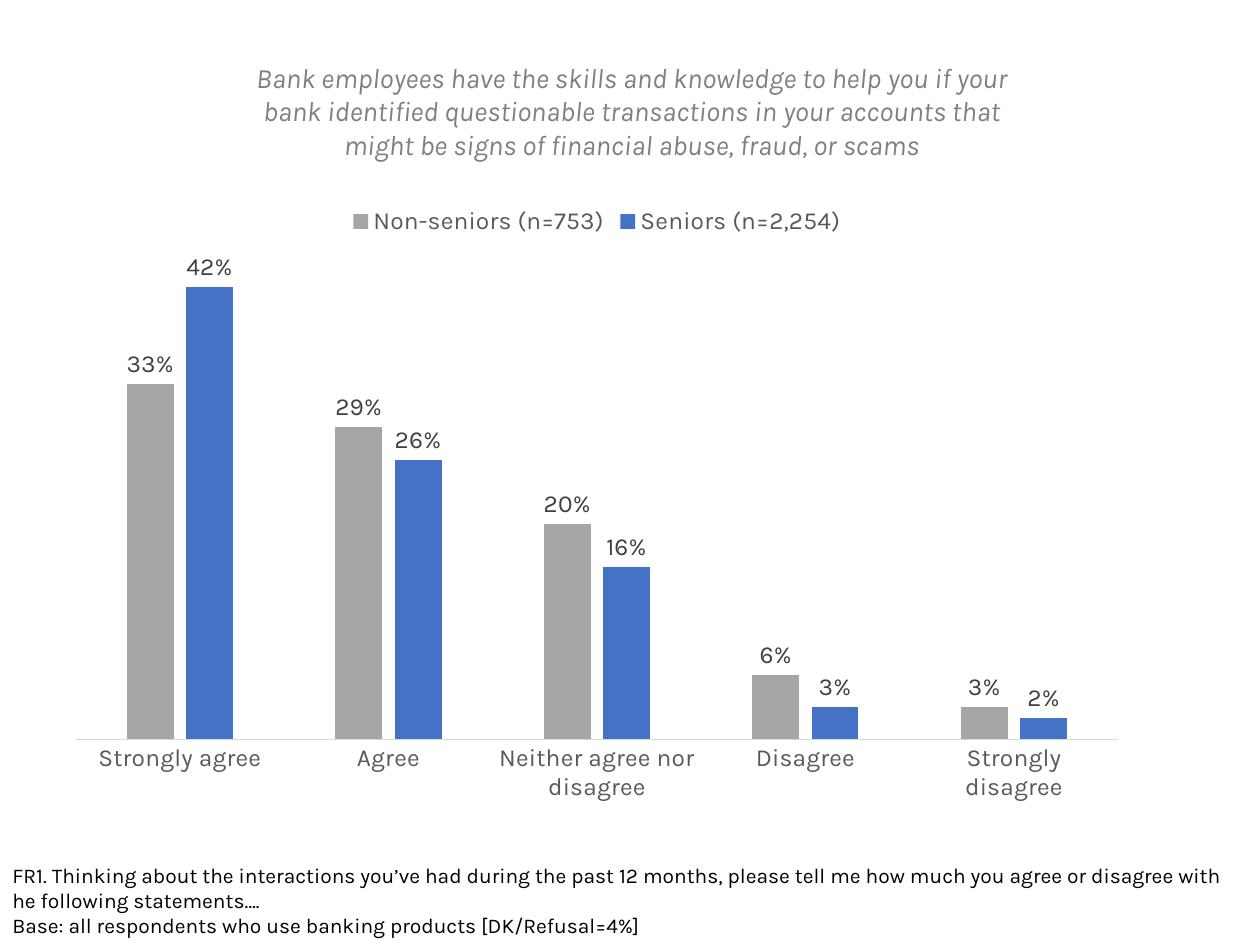
from dataclasses import dataclass

from lxml import etree
from pptx import Presentation
from pptx.chart.data import CategoryChartData
from pptx.dml.color import RGBColor
from pptx.enum.chart import (XL_CHART_TYPE, XL_LABEL_POSITION,
                             XL_LEGEND_POSITION, XL_TICK_MARK)
from pptx.enum.text import MSO_AUTO_SIZE, PP_ALIGN
from pptx.util import Pt

COLUMNS = XL_CHART_TYPE.COLUMN_CLUSTERED
LABEL_ABOVE = XL_LABEL_POSITION.OUTSIDE_END
LEGEND_TOP = XL_LEGEND_POSITION.TOP
NO_TICK = XL_TICK_MARK.NONE
LEFT, CENTER = PP_ALIGN.LEFT, PP_ALIGN.CENTER
GROW = MSO_AUTO_SIZE.SHAPE_TO_FIT_TEXT

EMU_PER_PX = 914400 / 126
PERCENT = "0%"
CHART_NS = "http://schemas.openxmlformats.org/drawingml/2006/chart"


@dataclass(frozen=True)
class Theme:
    font: str = "Karla"
    chart_font: str = "Calibri"
    question_size: int = 16
    chart_size: int = 14
    base_size: int = 12
    default_size: int = 10
    black: str = "000000"
    question: str = "808080"
    axis_text: str = "595959"
    axis_line: str = "D9D9D9"
    value_text: str = "404040"
    non_seniors: str = "A6A6A6"
    seniors: str = "4472C4"


THEME = Theme()

QUESTION = ("Bank employees have the skills and knowledge to help you if your "
            "bank identified questionable transactions in your accounts that "
            "might be signs of financial abuse, fraud, or scams")
FOOTNOTE = ("FR1. Thinking about the interactions you’ve had during the past "
            "12 months, please tell me how much you agree or disagree with "
            "he following statements….\n"
            "Base: all respondents who use banking products [DK/Refusal=4%]")

ANSWERS = ["Strongly agree", "Agree", "Neither agree nor disagree",
           "Disagree", "Strongly disagree"]
GROUPS = [
    ("Non-seniors (n=753)", [0.33, 0.29, 0.20, 0.06, 0.03], THEME.non_seniors),
    ("Seniors (n=2,254)", [0.42, 0.26, 0.16, 0.03, 0.02], THEME.seniors),
]


def px(length):
    return round(length * EMU_PER_PX)


def style_font(font, size, color, name=THEME.font, italic=None):
    font.name = name
    font.size = Pt(size)
    font.color.rgb = RGBColor.from_string(color)
    font.italic = italic


def add_text(slide, text, box, size, color, align=LEFT, italic=None):
    frame = slide.shapes.add_textbox(*map(px, box)).text_frame
    frame.word_wrap = True
    frame.auto_size = GROW
    frame.text = text
    for paragraph in frame.paragraphs:
        paragraph.alignment = align
        for run in paragraph.runs:
            style_font(run.font, size, color, italic=italic)


def place_plot(chart, **fractions):
    """Fix the inner plot area, as fractions of the chart frame."""
    plot_area = chart.plots[0]._element.getparent()
    for old in plot_area.findall(f"{{{CHART_NS}}}layout"):
        plot_area.remove(old)
    layout = etree.Element(f"{{{CHART_NS}}}layout")
    manual = etree.SubElement(layout, f"{{{CHART_NS}}}manualLayout")
    settings = {"layoutTarget": "inner", "xMode": "edge", "yMode": "edge",
                **fractions}
    for tag, value in settings.items():
        etree.SubElement(manual, f"{{{CHART_NS}}}{tag}", val=str(value))
    plot_area.insert(0, layout)


def style_axes(chart):
    answers = chart.category_axis
    answers.major_tick_mark = answers.minor_tick_mark = NO_TICK
    answers.has_major_gridlines = False
    answers.format.line.color.rgb = RGBColor.from_string(THEME.axis_line)
    answers.format.line.width = Pt(0.75)
    style_font(answers.tick_labels.font, THEME.chart_size, THEME.axis_text)

    shares = chart.value_axis
    shares.minimum_scale, shares.maximum_scale = 0, 0.45
    shares.has_major_gridlines = False
    shares.tick_labels.number_format = PERCENT
    shares.tick_labels.number_format_is_linked = False
    shares.visible = False


def style_group(series, color):
    series.format.fill.solid()
    series.format.fill.fore_color.rgb = RGBColor.from_string(color)
    series.invert_if_negative = False
    labels = series.data_labels
    labels.show_value = True
    labels.number_format = PERCENT
    labels.number_format_is_linked = False
    labels.position = LABEL_ABOVE
    style_font(labels.font, THEME.chart_size, THEME.value_text)


def add_answer_chart(slide, box):
    data = CategoryChartData(number_format=PERCENT)
    data.categories = ANSWERS
    for name, shares, _ in GROUPS:
        data.add_series(name, shares)
    chart = slide.shapes.add_chart(COLUMNS, *map(px, box), data).chart
    chart.has_title = False
    style_font(chart.font, THEME.default_size, THEME.black, THEME.chart_font)

    chart.has_legend = True
    chart.legend.position = LEGEND_TOP
    chart.legend.include_in_layout = False
    style_font(chart.legend.font, THEME.chart_size, THEME.axis_text)

    columns = chart.plots[0]
    columns.vary_by_categories = False
    columns.gap_width = 219
    columns.overlap = -27
    for series, (_, _, color) in zip(columns.series, GROUPS):
        style_group(series, color)
    style_axes(chart)
    place_plot(chart, x=0.02, y=0.1, w=0.96, h=0.78)


def main():
    deck = Presentation()
    deck.slide_width, deck.slide_height = px(1260), px(945)
    slide = deck.slides.add_slide(deck.slide_layouts[6])

    # Footnote with question wording and base
    add_text(slide, FOOTNOTE, (0, 856, 1260, 89), THEME.base_size, THEME.black)
    # Statement being rated
    add_text(slide, QUESTION, (242, 54, 780, 115), THEME.question_size,
             THEME.question, CENTER, italic=True)
    # Agreement by age group
    add_answer_chart(slide, (54, 193, 1086, 621))

    deck.save("out.pptx")


if __name__ == "__main__":
    main()
